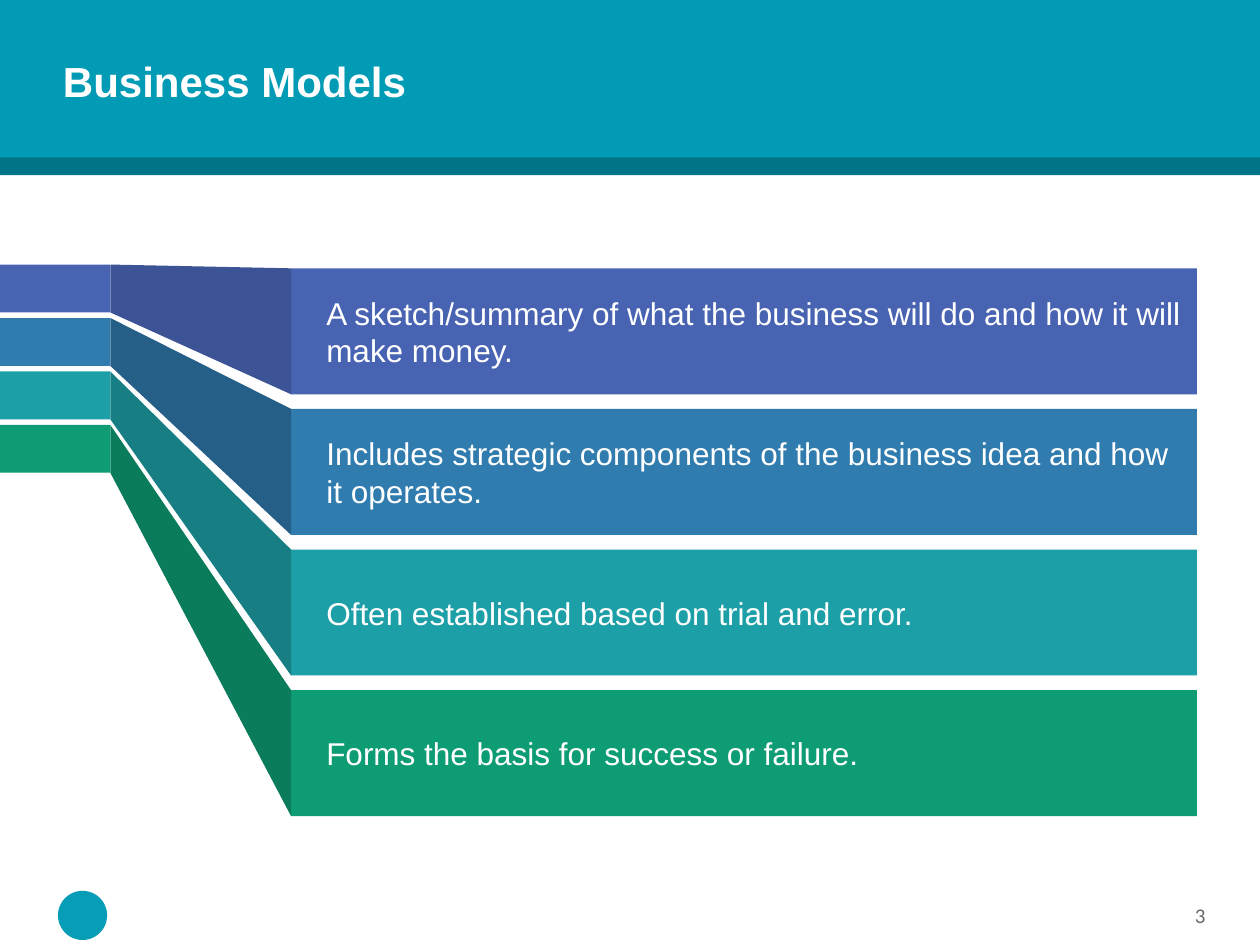
from pptx import Presentation
from pptx.dml.color import RGBColor
from pptx.enum.shapes import MSO_SHAPE
from pptx.enum.text import MSO_ANCHOR, PP_ALIGN
from pptx.util import Inches, Pt

WIDTH, HEIGHT = 10, 7.5
BAR_LEFT, BAR_TOP, BAR_HEIGHT, BAR_STEP = 2.31, 2.13, 1, 1.116
TAB_WIDTH, TAB_TOP, TAB_HEIGHT, TAB_STEP = 0.875, 2.1, 0.38, 0.424
RIGHT_EDGE = 0.95 * WIDTH

ROWS = [
    ("A sketch/summary of what the business will do and how it will make money.",
     "4763B2", "3C5496"),
    ("Includes strategic components of the business idea and how it operates.",
     "307CAE", "255F87"),
    ("Often established based on trial and error.", "1D9FA7", "177E83"),
    ("Forms the basis for success or failure.", "0D9C74", "0A7C5B"),
]

presentation = Presentation()
presentation.slide_width = Inches(WIDTH)
presentation.slide_height = Inches(HEIGHT)
slide = presentation.slides.add_slide(presentation.slide_layouts[6])


def paint(shape, color):
    shape.shadow.inherit = False
    shape.fill.solid()
    shape.fill.fore_color.rgb = RGBColor.from_string(color)
    shape.line.fill.background()


def write(shape, text, size, color, font="Arial", margins=(0, 0, 0, 0),
          align=PP_ALIGN.LEFT, anchor=MSO_ANCHOR.MIDDLE):
    """Put one paragraph in the shape and return it; margins run left, top, right, bottom."""
    frame = shape.text_frame
    frame.word_wrap = True
    frame.vertical_anchor = anchor
    (frame.margin_left, frame.margin_top,
     frame.margin_right, frame.margin_bottom) = map(Inches, margins)
    paragraph = frame.paragraphs[0]
    paragraph.text = text
    paragraph.alignment = align
    paragraph.font.name = font
    paragraph.font.size = Pt(size)
    paragraph.font.color.rgb = RGBColor.from_string(color)
    return paragraph


# Header band, title, logo placeholder and page number
for top, height, color in [(1.19, 0.2, "017488"), (0, 1.25, "019BB6")]:
    band = slide.shapes.add_shape(
        MSO_SHAPE.RECTANGLE, 0, Inches(top), Inches(WIDTH), Inches(height))
    paint(band, color)

title = slide.shapes.add_textbox(
    Inches(0.05 * WIDTH), Inches(0.26), Inches(0.9 * WIDTH), Inches(0.81))
heading = write(title, "Business Models", 24, "FFFFFF")
heading.font.bold = True
heading.line_spacing = 0.9

emblem = slide.shapes.add_shape(
    MSO_SHAPE.OVAL, Inches(0.46), Inches(7.07), Inches(0.39), Inches(0.39))
paint(emblem, "089DB7")

page_number = slide.shapes.add_textbox(
    Inches(9.29), Inches(7.16), Inches(0.47), Inches(0.2))
write(page_number, "3", 12, "696969", font="Calibri",
      align=PP_ALIGN.CENTER, anchor=MSO_ANCHOR.TOP)

# Each row is a small tab at the slide edge, fanning out into a wide bar
for row, (text, color, shade) in enumerate(ROWS):
    bar_top = BAR_TOP + row * BAR_STEP
    tab_top = TAB_TOP + row * TAB_STEP

    bar = slide.shapes.add_shape(
        MSO_SHAPE.RECTANGLE, Inches(BAR_LEFT), Inches(bar_top),
        Inches(RIGHT_EDGE - BAR_LEFT), Inches(BAR_HEIGHT))
    paint(bar, color)
    write(bar, text, 18, "FFFFFF", margins=(0.28, 0.05, 0.1, 0.05))

    builder = slide.shapes.build_freeform(
        Inches(TAB_WIDTH), Inches(tab_top + TAB_HEIGHT))
    builder.add_line_segments([
        (Inches(BAR_LEFT), Inches(bar_top + BAR_HEIGHT)),
        (Inches(BAR_LEFT), Inches(bar_top)),
        (Inches(TAB_WIDTH), Inches(tab_top)),
    ])
    paint(builder.convert_to_shape(), shade)

    tab = slide.shapes.add_shape(
        MSO_SHAPE.RECTANGLE, 0, Inches(tab_top),
        Inches(TAB_WIDTH), Inches(TAB_HEIGHT))
    paint(tab, color)

presentation.save("out.pptx")
